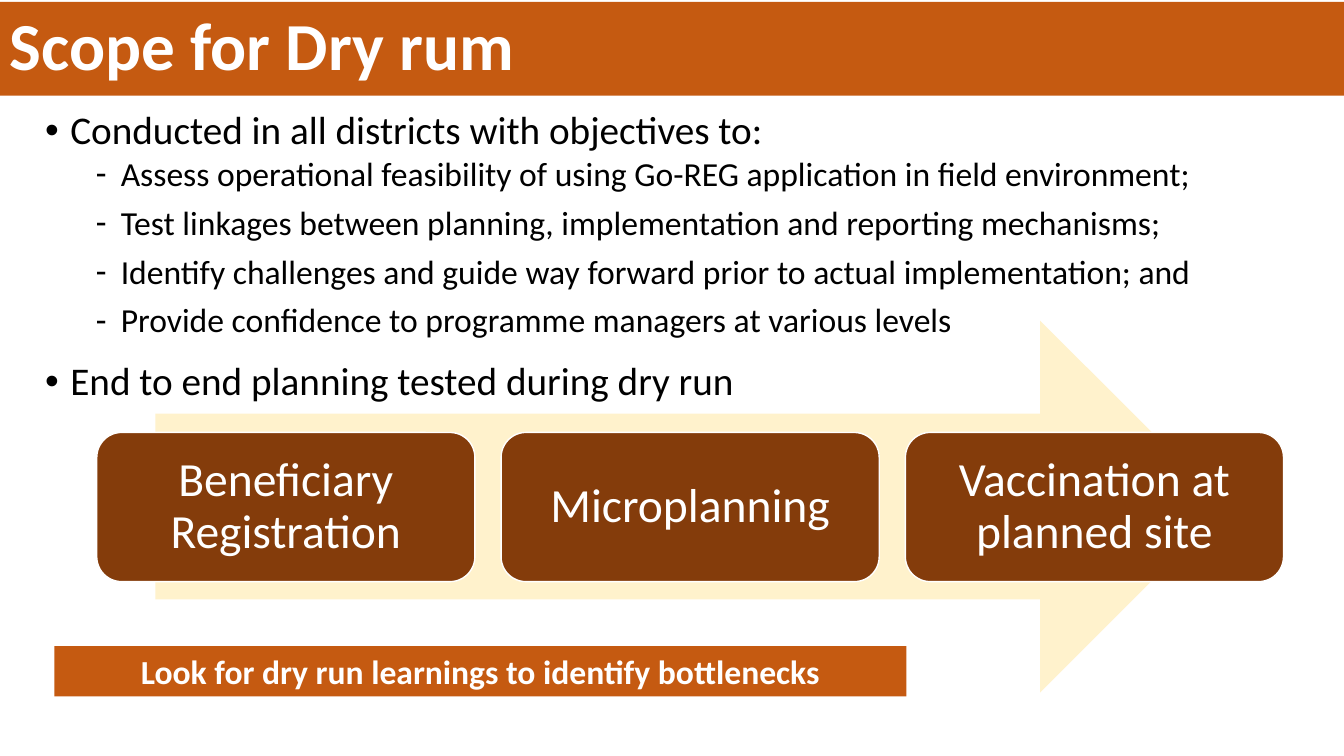
from dataclasses import dataclass

from lxml.etree import SubElement
from pptx import Presentation
from pptx.dml.color import RGBColor
from pptx.enum.shapes import MSO_SHAPE
from pptx.enum.text import MSO_ANCHOR, PP_ALIGN
from pptx.oxml.ns import qn
from pptx.util import Inches, Pt

COLORS = {"orange": "C55A11", "brown": "843C0B", "cream": "FFF2CC",
          "white": "FFFFFF", "black": "000000"}


@dataclass
class Block:
    left: float
    top: float
    width: float
    height: float
    fill: str
    kind: MSO_SHAPE = MSO_SHAPE.RECTANGLE
    line: str = ""
    text: str = ""
    size: int = 24
    bold: bool = False
    align: PP_ALIGN = PP_ALIGN.CENTER
    anchor: MSO_ANCHOR = MSO_ANCHOR.MIDDLE
    spacing: float = 1.0
    inset: float = 0.1


@dataclass
class Level:
    bullet: str
    size: int
    indent: float
    spacing: dict


@dataclass
class Bullet:
    text: str
    level: int = 0


def rgb(name: str) -> RGBColor:
    return RGBColor.from_string(COLORS[name])


def set_all(obj, values: dict) -> None:
    for name, value in values.items():
        setattr(obj, name, value)


def add_run(p, text: str, size: int, color: str, bold: bool = False) -> None:
    r = p.add_run()
    r.text = text
    set_all(r.font, {"name": "Calibri", "size": Pt(size), "bold": bold})
    r.font.color.rgb = rgb(color)


def draw_block(s, b: Block) -> None:
    sp = s.shapes.add_shape(b.kind, Inches(b.left), Inches(b.top),
                            Inches(b.width), Inches(b.height))
    sp.shadow.inherit = False
    sp.fill.solid()
    sp.fill.fore_color.rgb = rgb(b.fill)
    if b.line:
        sp.line.color.rgb = rgb(b.line)
        sp.line.width = Pt(1)
    else:
        sp.line.fill.background()
    if b.text:
        tf = sp.text_frame
        set_all(tf, {"word_wrap": True, "vertical_anchor": b.anchor,
                     "margin_left": Inches(b.inset),
                     "margin_right": Inches(b.inset)})
        p = tf.paragraphs[0]
        set_all(p, {"alignment": b.align, "line_spacing": b.spacing})
        add_run(p, b.text, b.size, "white", b.bold)


def draw_bullets(s, bullets: list[Bullet], levels: list[Level]) -> None:
    tf = s.shapes.add_textbox(Inches(0.35), Inches(1.05),
                              Inches(12.8), Inches(5.69)).text_frame
    tf.word_wrap = True
    for i, item in enumerate(bullets):
        p = tf.add_paragraph() if i else tf.paragraphs[0]
        level = levels[item.level]
        set_all(p, {"level": item.level, **level.spacing})
        add_run(p, item.text, level.size, "black")
        # Hanging indent and bullet sign
        pPr = p._p.get_or_add_pPr()
        pPr.set("marL", str(Inches(level.indent)))
        pPr.set("indent", str(-Inches(0.25)))
        SubElement(pPr, qn("a:buFont")).set("typeface", "Arial")
        SubElement(pPr, qn("a:buChar")).set("char", level.bullet)


LEVELS = [
    Level("•", 28, 0.25, {"line_spacing": 0.9, "space_before": Pt(10)}),
    Level("-", 24, 0.75, {"space_before": Pt(0), "space_after": Pt(6)}),
]
BULLETS = [
    Bullet("Conducted in all districts with objectives to:"),
    Bullet("Assess operational feasibility of using Go-REG application in field environment;", 1),
    Bullet("Test linkages between planning, implementation and reporting mechanisms;", 1),
    Bullet("Identify challenges and guide way forward prior to actual implementation; and", 1),
    Bullet("Provide confidence to programme managers at various levels", 1),
    Bullet("End to end planning tested during dry run"),
]
STEPS = ["Beneficiary Registration", "Microplanning", "Vaccination at planned site"]
STEP_LEFT, STEP_PITCH = 0.96, 4.01


def main() -> None:
    prs = Presentation()
    prs.slide_width, prs.slide_height = Inches(13.33), Inches(7.5)
    s = prs.slides.add_slide(prs.slide_layouts[6])

    # Title bar and bullets
    draw_block(s, Block(0, 0.02, 13.33, 0.93, "orange", text="Scope for Dry rum",
                        size=48, bold=True, align=PP_ALIGN.LEFT, spacing=0.9))
    draw_bullets(s, BULLETS, LEVELS)

    # Closing message
    draw_block(s, Block(0.54, 6.41, 8.45, 0.5, "orange", bold=True,
                        text="Look for dry run learnings to identify bottlenecks",
                        anchor=MSO_ANCHOR.TOP))

    # Process arrow with its steps
    draw_block(s, Block(1.54, 3.18, 10.62, 3.69, "cream", MSO_SHAPE.RIGHT_ARROW))
    for i, step in enumerate(STEPS):
        draw_block(s, Block(STEP_LEFT + i * STEP_PITCH, 4.29, 3.75, 1.48, "brown",
                            MSO_SHAPE.ROUNDED_RECTANGLE, "white", step, 34,
                            spacing=0.9, inset=0.14))

    prs.save("out.pptx")


if __name__ == "__main__":
    main()
